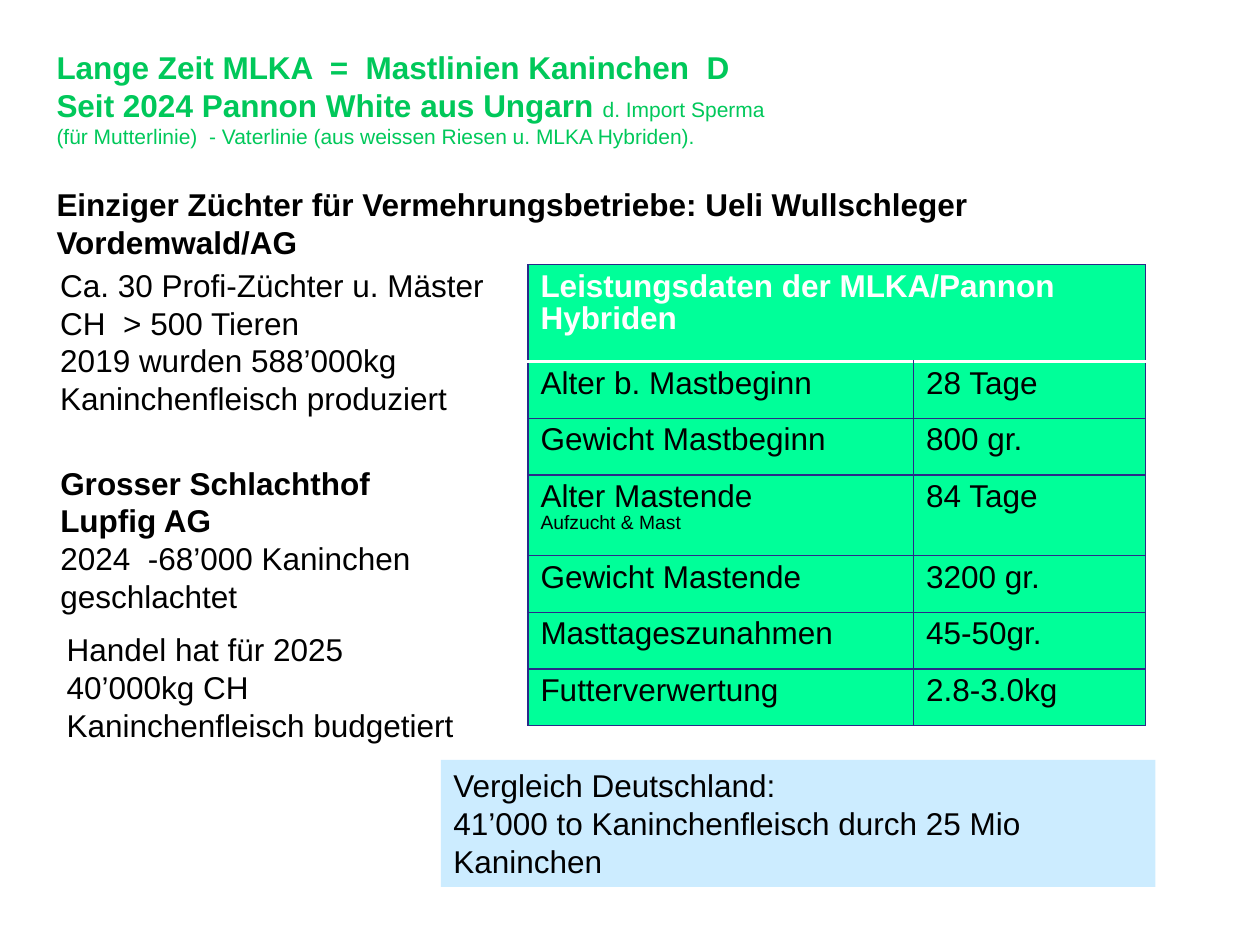
from collections import namedtuple
from dataclasses import dataclass

from lxml import etree
from pptx import Presentation
from pptx import util as u
from pptx.dml import color
from pptx.enum import shapes, text
from pptx.oxml import ns

Box = namedtuple("Box", "left top width height")


@dataclass(frozen=True)
class Theme:
    font: str = "Arial"
    body: float = 18
    detail: float = 12
    note: float = 11
    ink: str = "000000"
    white: str = "FFFFFF"
    heading: str = "00C85A"
    cell: str = "00FF99"
    border: str = "2A2A89"
    panel: str = "CCECFF"


THEME = Theme()


def inches(box):
    return [u.Inches(value) for value in box]


def add_text(paragraph, content, size=THEME.body, ink=THEME.ink, bold=False,
             before=0, spacing=None):
    run = paragraph.add_run()
    run.text = content
    run.font.name = THEME.font
    run.font.size = u.Pt(size)
    run.font.bold = bold
    run.font.color.rgb = color.RGBColor.from_string(ink)
    if before:
        paragraph.space_before = u.Pt(before)
    if spacing:
        paragraph.line_spacing = spacing


def fill_frame(frame, paragraphs):
    frame.word_wrap = True
    for index, runs in enumerate(paragraphs):
        paragraph = frame.add_paragraph() if index else frame.paragraphs[0]
        paragraph.alignment = text.PP_ALIGN.LEFT
        for content, style in runs:
            add_text(paragraph, content, **style)


def add_text_block(slide, box, paragraphs):
    frame = slide.shapes.add_textbox(*inches(box)).text_frame
    fill_frame(frame, paragraphs)
    frame.auto_size = text.MSO_AUTO_SIZE.SHAPE_TO_FIT_TEXT


def add_heading(slide, box):
    strong = dict(ink=THEME.heading, bold=True)
    detail = dict(ink=THEME.heading, size=THEME.detail)
    add_text_block(slide, box, [
        [("Lange Zeit MLKA  =  Mastlinien Kaninchen  D", strong)],
        [("Seit 2024 Pannon White aus Ungarn ", strong), ("d. Import Sperma", detail)],
        [("(für Mutterlinie)  - Vaterlinie (aus weissen Riesen u. MLKA Hybriden).", detail)],
        [("Einziger Züchter für Vermehrungsbetriebe: Ueli Wullschleger Vordemwald/AG",
          dict(bold=True, before=20.7))],
    ])


def add_facts(slide, box, lines, bold_first=False):
    add_text_block(slide, box, [
        [(line, dict(bold=bold_first and index == 0))] for index, line in enumerate(lines)
    ])


def set_border(cell, side, ink, width):
    properties = cell._tc.get_or_add_tcPr()
    line = etree.SubElement(properties, ns.qn(f"a:ln{side}"), w=str(u.Pt(width)))
    fill = etree.SubElement(line, ns.qn("a:solidFill"))
    etree.SubElement(fill, ns.qn("a:srgbClr"), val=ink)


def style_cell(cell, row):
    for side in "LRTB":
        under_header = (row, side) in ((0, "B"), (1, "T"))
        set_border(cell, side, *((THEME.white, 2) if under_header else (THEME.border, 0.75)))
    cell.fill.solid()
    cell.fill.fore_color.rgb = color.RGBColor.from_string(THEME.cell)


def add_performance_table(slide, box):
    rows = [
        ("Leistungsdaten der MLKA/Pannon Hybriden", ""),
        ("Alter b. Mastbeginn", "28 Tage"),
        ("Gewicht Mastbeginn", "800 gr."),
        ("Alter Mastende\nAufzucht & Mast", "84 Tage"),
        ("Gewicht Mastende", "3200 gr."),
        ("Masttageszunahmen", "45-50gr."),
        ("Futterverwertung", "2.8-3.0kg"),
    ]
    heights = {0: 0.77, 3: 0.64}
    table = slide.shapes.add_table(len(rows), 2, *inches(box)).table
    label_width = 3.06
    for column, width in zip(table.columns, (label_width, box.width - label_width)):
        column.width = u.Inches(width)
    table.cell(0, 0).merge(table.cell(0, 1))
    for row, values in enumerate(rows):
        table.rows[row].height = u.Inches(heights.get(row, 0.45))
        for column, value in enumerate(values):
            cell = table.cell(row, column)
            style_cell(cell, row)
            if value:
                fill_frame(cell.text_frame, [
                    [(line, dict(size=THEME.note if index else THEME.body,
                                 ink=THEME.ink if row else THEME.white,
                                 bold=row == 0, spacing=0.93))]
                    for index, line in enumerate(value.split("\n"))
                ])


def add_comparison(slide, box):
    panel = slide.shapes.add_shape(shapes.MSO_SHAPE.RECTANGLE, *inches(box))
    panel.shadow.inherit = False
    panel.fill.solid()
    panel.fill.fore_color.rgb = color.RGBColor.from_string(THEME.panel)
    panel.line.fill.background()
    frame = panel.text_frame
    frame.vertical_anchor = text.MSO_ANCHOR.TOP
    fill_frame(frame, [
        [("Vergleich Deutschland:", {})],
        [("41’000 to Kaninchenfleisch durch 25 Mio Kaninchen", {})],
    ])
    frame.auto_size = text.MSO_AUTO_SIZE.SHAPE_TO_FIT_TEXT


def main():
    presentation = Presentation()
    presentation.slide_width = u.Inches(10)
    presentation.slide_height = u.Inches(7.5)
    slide = presentation.slides.add_slide(presentation.slide_layouts[6])
    add_heading(slide, Box(0.35, 0.33, 7.72, 1.82))
    add_facts(slide, Box(0.38, 2.06, 3.76, 1.31), [
        "Ca. 30 Profi-Züchter u. Mäster CH  > 500 Tieren",
        "2019 wurden 588’000kg Kaninchenfleisch produziert",
    ])
    add_facts(slide, Box(0.38, 3.63, 2.99, 1.31), [
        "Grosser Schlachthof Lupfig AG",
        "2024  -68’000 Kaninchen geschlachtet",
    ], bold_first=True)
    add_facts(slide, Box(0.43, 4.95, 3.39, 1.01), [
        "Handel hat für 2025",
        "40’000kg CH Kaninchenfleisch budgetiert",
    ])
    add_performance_table(slide, Box(4.19, 2.1, 4.9, 3.63))
    add_comparison(slide, Box(3.5, 6.03, 5.67, 1.01))
    presentation.save("out.pptx")


if __name__ == "__main__":
    main()
